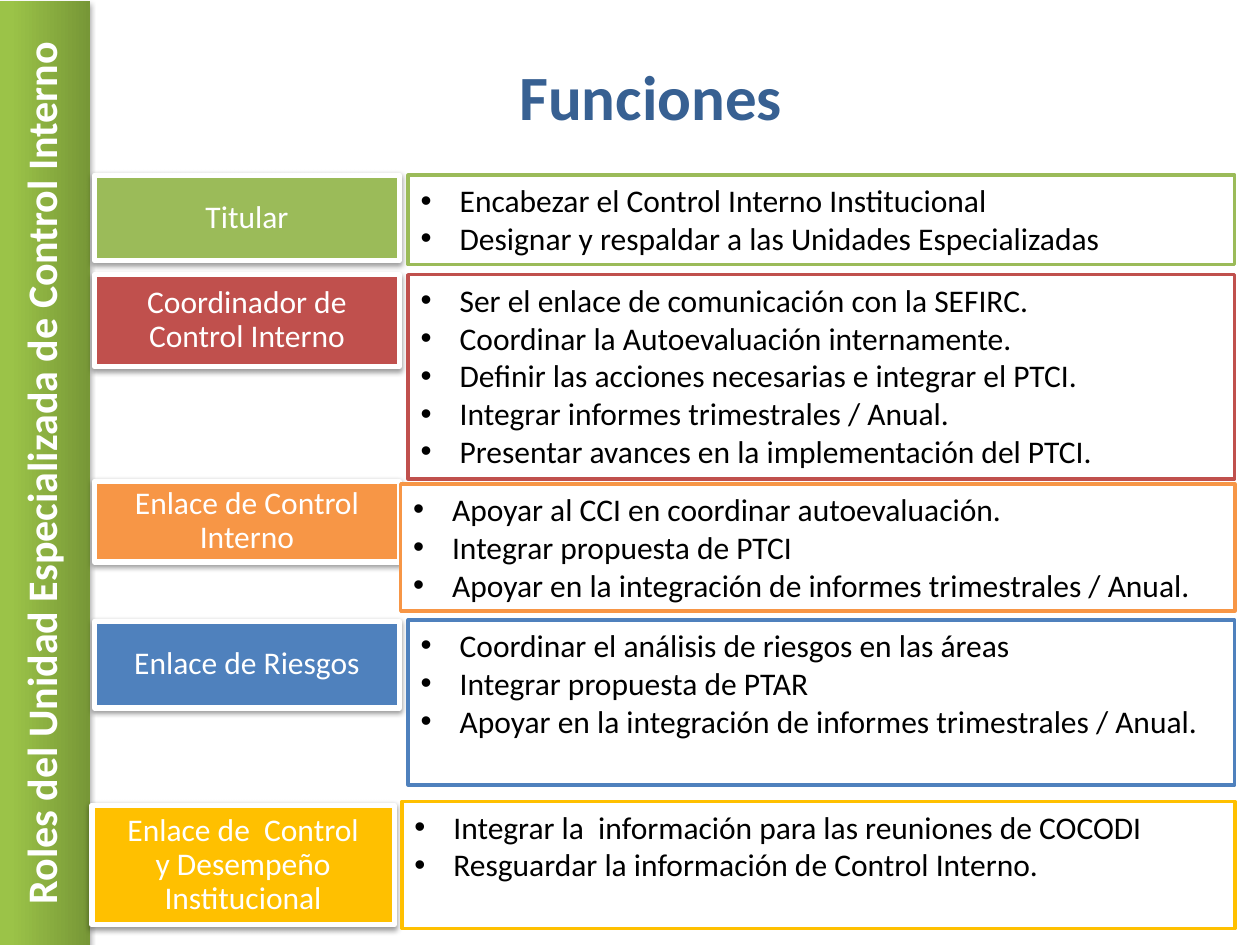
from dataclasses import dataclass

import lxml.etree
import pptx
import pptx.dml.color
import pptx.enum.shapes
import pptx.enum.text
import pptx.oxml.ns
import pptx.util

Inches = pptx.util.Inches
Pt = pptx.util.Pt
RGBColor = pptx.dml.color.RGBColor
Align = pptx.enum.text.PP_ALIGN
Anchor = pptx.enum.text.MSO_ANCHOR
qn = pptx.oxml.ns.qn

WHITE = RGBColor(0xFF, 0xFF, 0xFF)
BLACK = RGBColor(0x00, 0x00, 0x00)
NAVY = RGBColor(0x37, 0x60, 0x92)
GREEN = RGBColor(0x9B, 0xBB, 0x59)
RED = RGBColor(0xC0, 0x50, 0x4D)
ORANGE = RGBColor(0xF7, 0x96, 0x46)
BLUE = RGBColor(0x4F, 0x81, 0xBD)
YELLOW = RGBColor(0xFF, 0xC0, 0x00)
BAND_DARK = RGBColor(0x77, 0x97, 0x37)
BAND_MIDDLE = RGBColor(0x9B, 0xC3, 0x48)
BAND_LIGHT = RGBColor(0x9D, 0xC7, 0x46)

FONT = "Calibri"
BODY_RIGHT = 9.8
BULLET_INDENT = Inches(0.31)


@dataclass
class Box:
    left: float
    top: float
    width: float
    height: float


@dataclass
class Role:
    name: str
    color: RGBColor
    label: Box
    inset: float
    body_left: float
    body_top: float
    body_height: float
    duties: list[str]


ROLES = [
    Role("Titular", GREEN, Box(0.75, 1.39, 2.42, 0.68), 0.07, 3.24, 1.39, 0.71, [
        "Encabezar el Control Interno Institucional",
        "Designar y respaldar a las Unidades Especializadas",
    ]),
    Role("Coordinador de Control Interno", RED, Box(0.75, 2.18, 2.42, 0.73), 0.11, 3.24, 2.18, 1.62, [
        "Ser el enlace de comunicación con la SEFIRC.",
        "Coordinar la Autoevaluación internamente.",
        "Definir las acciones necesarias e integrar el PTCI.",
        "Integrar informes trimestrales / Anual.",
        "Presentar avances en la implementación del PTCI.",
    ]),
    Role("Enlace de Control Interno", ORANGE, Box(0.75, 3.82, 2.42, 0.64), 0.12, 3.18, 3.84, 1.01, [
        "Apoyar al CCI en coordinar autoevaluación.",
        "Integrar propuesta de PTCI",
        "Apoyar en la integración de informes trimestrales / Anual.",
    ]),
    Role("Enlace de Riesgos", BLUE, Box(0.75, 4.93, 2.42, 0.69), 0.24, 3.24, 4.92, 1.31, [
        "Coordinar el análisis de riesgos en las áreas",
        "Integrar propuesta de PTAR",
        "Apoyar en la integración de informes trimestrales / Anual.",
    ]),
    Role("Enlace de  Control y Desempeño Institucional", YELLOW, Box(0.73, 6.39, 2.4, 0.95), 0.24, 3.19, 6.36, 1.01, [
        "Integrar la  información para las reuniones de COCODI",
        "Resguardar la información de Control Interno.",
    ]),
]


def add_shadow(properties, opacity: int, distance: float) -> None:
    effects = properties.find(qn("a:effectLst"))
    if effects is None:
        effects = lxml.etree.SubElement(properties, qn("a:effectLst"))
    shadow = lxml.etree.SubElement(
        effects, qn("a:outerShdw"), blurRad=str(Pt(3.1)), dist=str(Pt(distance)),
        dir="5400000", rotWithShape="0")
    color = lxml.etree.SubElement(shadow, qn("a:srgbClr"), val=str(BLACK))
    lxml.etree.SubElement(color, qn("a:alpha"), val=str(opacity * 1000))


def format_text(paragraph, size: float, color: RGBColor, bold: bool = False) -> None:
    for run in paragraph.runs:
        run.font.name = FONT
        run.font.size = Pt(size)
        run.font.bold = bold
        run.font.color.rgb = color


def add_box(slide, box: Box):
    shape = slide.shapes.add_shape(
        pptx.enum.shapes.MSO_SHAPE.RECTANGLE, Inches(box.left), Inches(box.top),
        Inches(box.width), Inches(box.height))
    shape.shadow.inherit = False
    shape.text_frame.word_wrap = True
    return shape


def add_side_band(slide, text: str) -> None:
    band = add_box(slide, Box(-3.43, 3.36, 7.5, 0.79))
    band.rotation = 270
    band.line.fill.background()
    band.fill.gradient()
    band.fill.gradient_angle = 90
    stop_list = band._element.spPr.find(".//" + qn("a:gsLst"))
    lxml.etree.SubElement(stop_list, qn("a:gs"), pos="100000")
    colors = [(0, BAND_DARK), (0.8, BAND_MIDDLE), (1, BAND_LIGHT)]
    for stop, (position, color) in zip(band.fill.gradient_stops, colors):
        stop.position = position
        stop.color.rgb = color
    add_shadow(band._element.spPr, 35, 1.8)
    band.text_frame.text = text
    paragraph = band.text_frame.paragraphs[0]
    paragraph.alignment = Align.CENTER
    format_text(paragraph, 24, WHITE, bold=True)


def add_label(slide, role: Role) -> None:
    label = add_box(slide, role.label)
    label.fill.solid()
    label.fill.fore_color.rgb = role.color
    label.line.color.rgb = WHITE
    label.line.width = Pt(3)
    add_shadow(label._element.spPr, 38, 1.6)
    frame = label.text_frame
    frame.margin_left = frame.margin_right = Inches(role.inset)
    frame.margin_top = frame.margin_bottom = Inches(role.inset)
    frame.text = role.name
    paragraph = frame.paragraphs[0]
    paragraph.alignment = Align.CENTER
    paragraph.line_spacing = 0.9
    format_text(paragraph, 18, WHITE)


def add_duties(slide, role: Role) -> None:
    width = BODY_RIGHT - role.body_left
    body = add_box(slide, Box(role.body_left, role.body_top, width, role.body_height))
    body.fill.solid()
    body.fill.fore_color.rgb = WHITE
    body.line.color.rgb = role.color
    body.line.width = Pt(2)
    body.text_frame.vertical_anchor = Anchor.TOP
    body.text_frame.text = "\n".join(role.duties)
    for paragraph in body.text_frame.paragraphs:
        paragraph.alignment = Align.LEFT
        properties = paragraph._p.get_or_add_pPr()
        properties.set("marL", str(BULLET_INDENT))
        properties.set("indent", str(-BULLET_INDENT))
        lxml.etree.SubElement(properties, qn("a:buFont"), typeface="Arial")
        lxml.etree.SubElement(properties, qn("a:buChar"), char="•")
        format_text(paragraph, 18, BLACK)


def set_title(slide, text: str) -> None:
    title = slide.shapes.title
    title.left, title.top = Inches(-0.04), Inches(0.38)
    title.width, title.height = Inches(10.41), Inches(0.75)
    title.text_frame.text = text
    title.text_frame.vertical_anchor = Anchor.MIDDLE
    paragraph = title.text_frame.paragraphs[0]
    paragraph.alignment = Align.CENTER
    run = paragraph.runs[0]
    run.font.color.rgb = NAVY
    add_shadow(run._r.get_or_add_rPr(), 40, 3)
    format_text(paragraph, 36, NAVY, bold=True)


def main() -> None:
    presentation = pptx.Presentation()
    presentation.slide_width = Inches(10)
    presentation.slide_height = Inches(7.5)
    slide = presentation.slides.add_slide(presentation.slide_layouts[5])
    set_title(slide, "Funciones")
    add_side_band(slide, "Roles del Unidad Especializada de Control Interno")
    for role in ROLES:
        add_label(slide, role)
        add_duties(slide, role)
    presentation.save("out.pptx")


if __name__ == "__main__":
    main()
